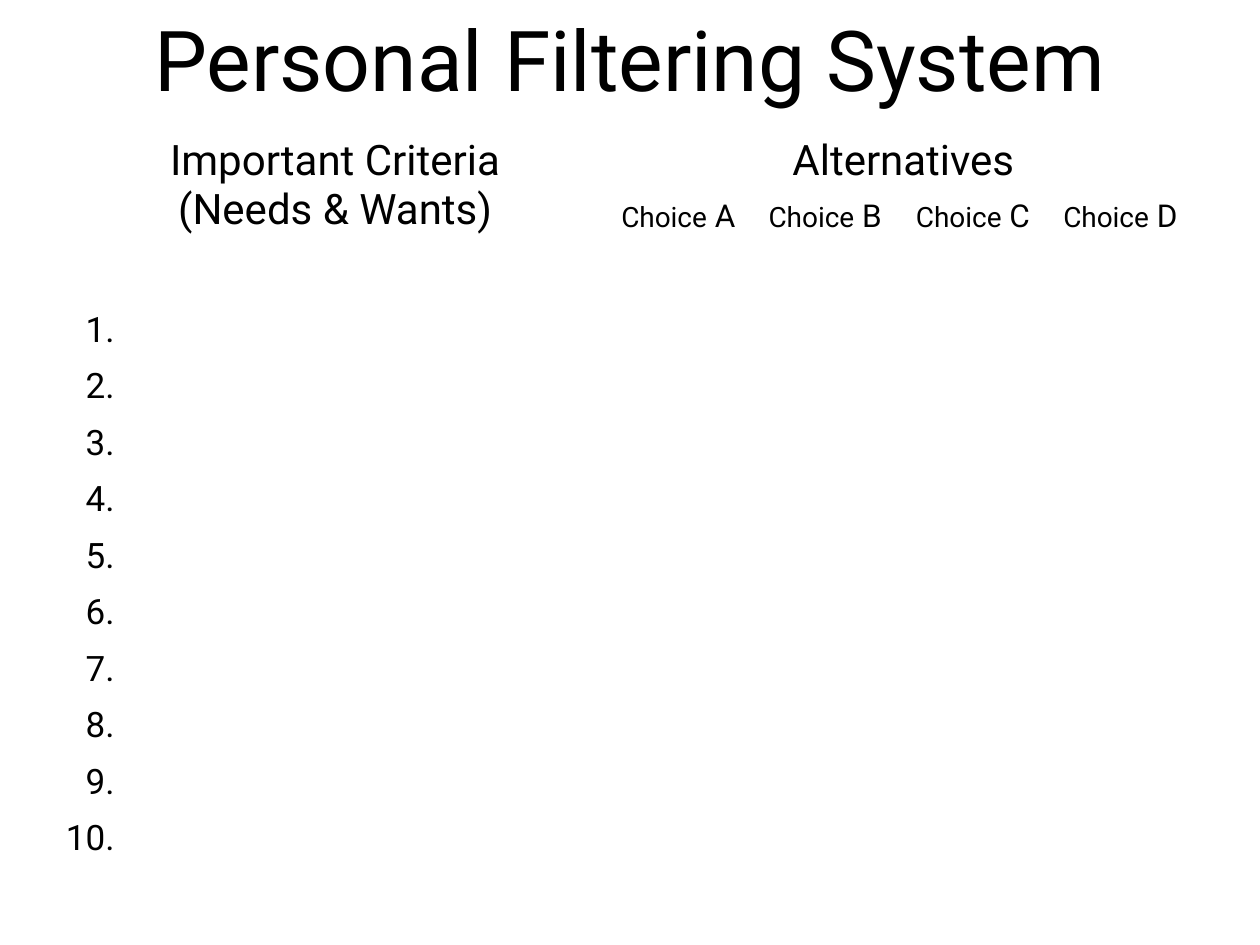
from dataclasses import dataclass

from lxml import etree
from pptx import Presentation
from pptx.dml.color import RGBColor
from pptx.enum.text import MSO_ANCHOR, MSO_AUTO_SIZE, PP_ALIGN
from pptx.oxml.ns import qn
from pptx.util import Cm, Pt

LEFT, CENTER, RIGHT = PP_ALIGN.LEFT, PP_ALIGN.CENTER, PP_ALIGN.RIGHT
TOP = MSO_ANCHOR.TOP
NO_AUTO_SIZE = MSO_AUTO_SIZE.NONE
TITLE_ONLY = 5


@dataclass(frozen=True)
class Theme:
    font: str = "Roboto"
    ink: str = "000000"
    paper: str = "FFFFFF"
    title: int = 48
    heading: int = 24
    number: int = 20
    letter: int = 18
    choice: int = 16
    rule: int = 1


THEME = Theme()
CHOICES = "ABCD"
CRITERIA_COUNT = 10
COLUMN_WIDTHS = [1.07, 9.96] + [2.97] * len(CHOICES)
ROW_HEIGHTS = [0.5, 1.04] + [1.14] * CRITERIA_COUNT + [1.04]


def style_span(span, size):
    span.font.name = THEME.font
    span.font.size = Pt(size)
    span.font.color.rgb = RGBColor.from_string(THEME.ink)


def write_text(frame, text, size, alignment):
    frame.text = text
    for para in frame.paragraphs:
        para.alignment = alignment
        for span in para.runs:
            style_span(span, size)


def write_choice(frame, letter):
    para = frame.paragraphs[0]
    para.alignment = LEFT
    for text, size in (("Choice", THEME.choice), (f" {letter}", THEME.letter)):
        span = para.add_run()
        span.text = text
        style_span(span, size)


def format_cell(cell):
    cell.fill.background()
    properties = cell._tc.get_or_add_tcPr()
    for position, side in enumerate(("lnL", "lnR", "lnT", "lnB")):
        line = etree.Element(qn(f"a:{side}"), w=str(Pt(THEME.rule)))
        fill = etree.SubElement(line, qn("a:solidFill"))
        etree.SubElement(fill, qn("a:srgbClr"), val=THEME.paper)
        properties.insert(position, line)


def place_title(page, left, top, width, height):
    box = page.shapes.title
    box.left, box.top, box.width, box.height = left, top, width, height
    frame = box.text_frame
    frame.word_wrap = True
    frame.auto_size = NO_AUTO_SIZE
    frame.vertical_anchor = TOP
    write_text(frame, "Personal Filtering System", THEME.title, CENTER)


def fill_header(table):
    table.cell(0, 0).merge(table.cell(1, 1))
    table.cell(0, 2).merge(table.cell(0, len(COLUMN_WIDTHS) - 1))
    write_text(table.cell(0, 0).text_frame, "Important Criteria\v(Needs & Wants)",
               THEME.heading, CENTER)
    write_text(table.cell(0, 2).text_frame, "Alternatives", THEME.heading, CENTER)
    for column, letter in enumerate(CHOICES, start=2):
        write_choice(table.cell(1, column).text_frame, letter)


def fill_numbers(table):
    for number in range(1, CRITERIA_COUNT + 1):
        cell = table.cell(number + 1, 0)
        cell.margin_left = cell.margin_right = cell.margin_bottom = 0
        cell.margin_top = Cm(0.13)
        write_text(cell.text_frame, f"{number}.", THEME.number, RIGHT)


def place_filter_table(page, left, top, width, height):
    table = page.shapes.add_table(
        len(ROW_HEIGHTS), len(COLUMN_WIDTHS), left, top, width, height).table
    table.first_row = table.horz_banding = False
    for column, size in zip(table.columns, COLUMN_WIDTHS):
        column.width = Cm(size)
    for row, size in zip(table.rows, ROW_HEIGHTS):
        row.height = Cm(size)
    for cell in table.iter_cells():
        format_cell(cell)
    fill_header(table)
    fill_numbers(table)


def main():
    deck = Presentation()
    deck.slide_width, deck.slide_height = Cm(25.4), Cm(19.05)
    page = deck.slides.add_slide(deck.slide_layouts[TITLE_ONLY])
    background = page.background.fill
    background.solid()
    background.fore_color.rgb = RGBColor.from_string(THEME.paper)
    place_filter_table(page, Cm(1.24), Cm(2.62),
                       Cm(sum(COLUMN_WIDTHS)), Cm(sum(ROW_HEIGHTS)))
    place_title(page, Cm(0), Cm(0.03), deck.slide_width, Cm(2.39))
    deck.save("out.pptx")


if __name__ == "__main__":
    main()
